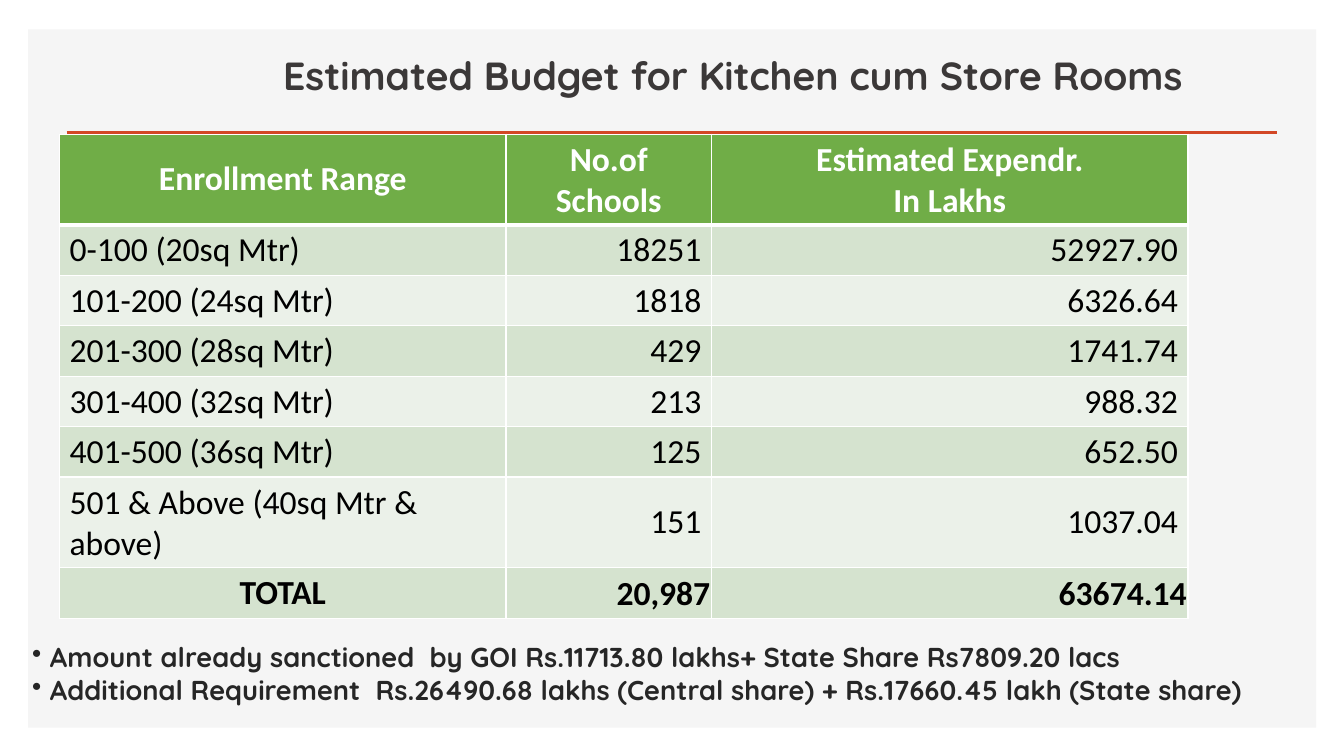
from lxml import etree
from pptx import Presentation
from pptx.dml.color import RGBColor
from pptx.enum.shapes import MSO_CONNECTOR, MSO_SHAPE
from pptx.enum.text import MSO_ANCHOR, PP_ALIGN
from pptx.oxml.ns import qn
from pptx.util import Cm, Pt

LEFT, CENTER, RIGHT = PP_ALIGN.LEFT, PP_ALIGN.CENTER, PP_ALIGN.RIGHT
MIDDLE = MSO_ANCHOR.MIDDLE
RECTANGLE = MSO_SHAPE.RECTANGLE
STRAIGHT = MSO_CONNECTOR.STRAIGHT

THEME = {
    "panel": "F5F5F5", "rule": "D24726", "border": "FFFFFF",
    "header": "70AD47", "bands": ("D5E3CF", "EBF1E9"),
    "title": {"name": "Quicksand", "size": Pt(28), "bold": True, "color": "3B3838"},
    "head": {"name": "Calibri", "size": Pt(24), "bold": True, "color": "FFFFFF"},
    "body": {"name": "Calibri", "size": Pt(24), "bold": False, "color": "000000"},
    "total": {"name": "Calibri", "size": Pt(24), "bold": True, "color": "000000"},
    "notes": {"name": "Quicksand", "size": Pt(19.5), "bold": True, "color": "262626"},
}

BUDGET = [
    ("Enrollment Range", "No.of Schools", "Estimated Expendr.\nIn Lakhs"),
    ("0-100 (20sq Mtr)", "18251", "52927.90"),
    ("101-200 (24sq Mtr)", "1818", "6326.64"),
    ("201-300 (28sq Mtr)", "429", "1741.74"),
    ("301-400 (32sq Mtr)", "213", "988.32"),
    ("401-500 (36sq Mtr)", "125", "652.50"),
    ("501 & Above (40sq Mtr & above)", "151", "1037.04"),
    ("TOTAL", "20,987", "63674.14"),
]
COLUMN_WIDTHS = (11.25, 5.18, 12.01)
TALL_ROWS = (0, 6)
LAST = len(BUDGET) - 1
NOTES = [
    "Amount already sanctioned  by GOI Rs.11713.80 lakhs+ State Share Rs7809.20 lacs",
    "Additional Requirement  Rs.26490.68 lakhs (Central share) + Rs.17660.45 lakh (State share)",
]


def write(frame, text, style, align):
    frame.word_wrap = True
    frame.text = text
    for paragraph in frame.paragraphs:
        paragraph.alignment = align
        for run in paragraph.runs:
            for attribute in ("name", "size", "bold"):
                setattr(run.font, attribute, style[attribute])
            run.font.color.rgb = RGBColor.from_string(style["color"])


def add_border(cell, side, points):
    line = etree.SubElement(cell._tc.get_or_add_tcPr(), qn(f"a:ln{side}"), w=str(Pt(points)))
    fill = etree.SubElement(line, qn("a:solidFill"))
    etree.SubElement(fill, qn("a:srgbClr"), val=THEME["border"])


prs = Presentation()
prs.slide_width, prs.slide_height = Cm(33.87), Cm(19.05)
slide = prs.slides.add_slide(prs.slide_layouts[6])
shapes = slide.shapes

panel = shapes.add_shape(RECTANGLE, Cm(0.71), Cm(0.74), Cm(32.46), Cm(17.6))
panel.shadow.inherit = False
panel.fill.solid()
panel.fill.fore_color.rgb = RGBColor.from_string(THEME["panel"])
panel.line.fill.background()

rule = shapes.add_connector(STRAIGHT, Cm(1.68), Cm(3.33), Cm(32.18), Cm(3.33))
rule.line.color.rgb = RGBColor.from_string(THEME["rule"])
rule.line.width = Pt(2)
etree.SubElement(rule._element.spPr, qn("a:effectLst"))

title = shapes.add_textbox(Cm(1.7), Cm(0.99), Cm(28.35), Cm(1.78)).text_frame
title.vertical_anchor = MIDDLE
write(title, "Estimated Budget for Kitchen cum Store Rooms", THEME["title"], RIGHT)

budget = shapes.add_table(
    len(BUDGET), len(COLUMN_WIDTHS), Cm(1.5), Cm(3.38), Cm(sum(COLUMN_WIDTHS)), Cm(10.32)
).table
for column, width in zip(budget.columns, COLUMN_WIDTHS):
    column.width = Cm(width)

for r, entries in enumerate(BUDGET):
    budget.rows[r].height = Cm(1.8 if r in TALL_ROWS else 1.12)
    style = THEME[{0: "head", LAST: "total"}.get(r, "body")]
    color = THEME["bands"][(r - 1) % 2] if r else THEME["header"]
    for c, entry in enumerate(entries):
        cell = budget.cell(r, c)
        if r == 0 or (r == LAST and c == 0):
            align = CENTER
        else:
            align = RIGHT if c else LEFT
        write(cell.text_frame, entry, style, align)
        cell.vertical_anchor = MIDDLE
        if r == LAST and c:
            cell.margin_left = cell.margin_right = cell.margin_top = Cm(0.03)
            cell.margin_bottom = 0
        for side in "LRTB":
            below_header = (r, side) in ((0, "B"), (1, "T"))
            add_border(cell, side, 3 if below_header else 1)
        cell.fill.solid()
        cell.fill.fore_color.rgb = RGBColor.from_string(color)

notes = shapes.add_textbox(Cm(0.56), Cm(15.72), Cm(32.61), Cm(2.49)).text_frame
notes.vertical_anchor = MIDDLE
write(notes, "\n".join(NOTES), THEME["notes"], LEFT)
for paragraph in notes.paragraphs:
    properties = paragraph._p.get_or_add_pPr()
    properties.set("marL", str(Cm(0.45)))
    properties.set("indent", str(-Cm(0.45)))
    etree.SubElement(properties, qn("a:buChar"), char="•")

prs.save("out.pptx")
